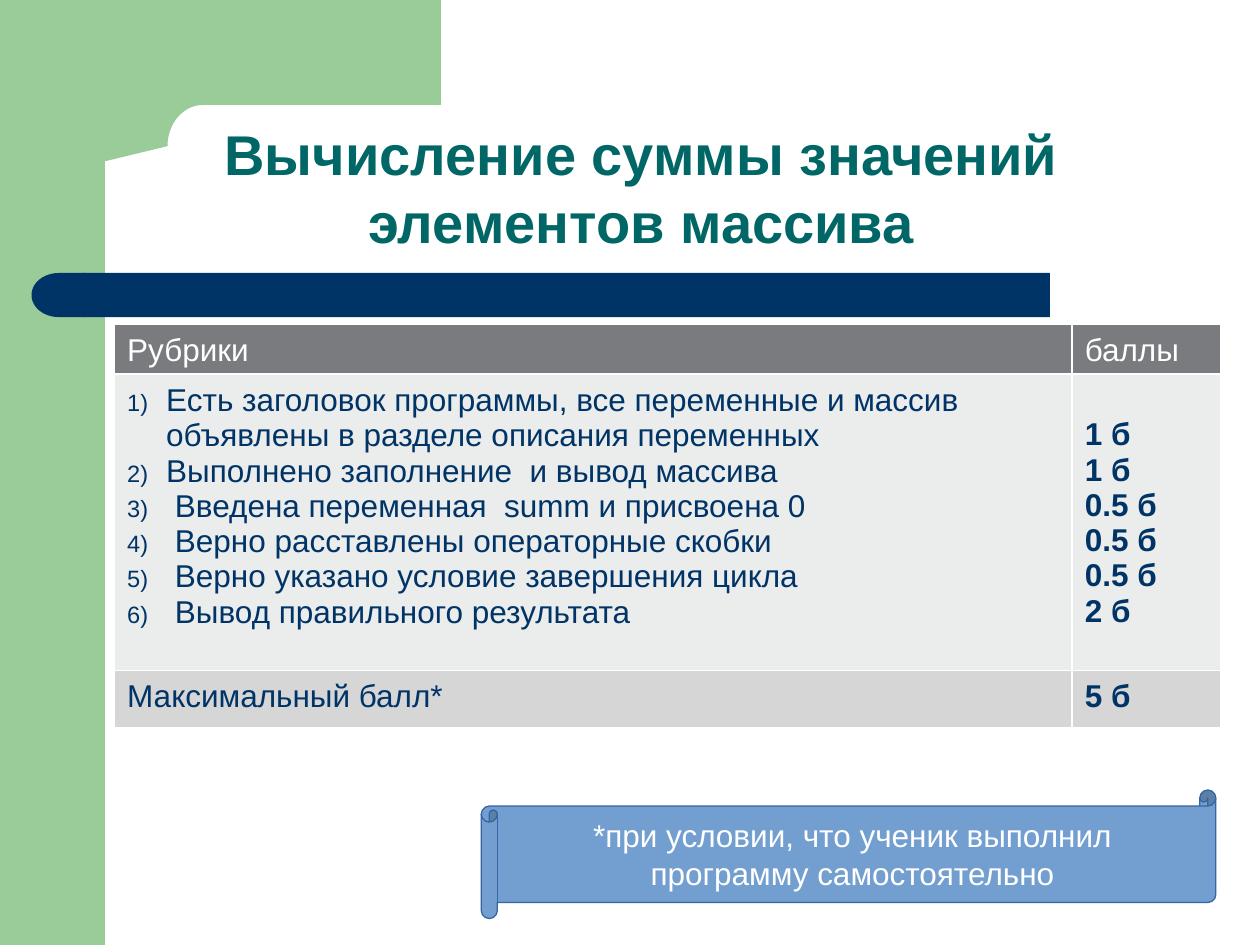
from dataclasses import dataclass
from math import cos, pi, sin

from lxml import etree
from pptx import Presentation
from pptx import util as u
from pptx.dml.color import RGBColor
from pptx.enum import shapes, text
from pptx.oxml.ns import qn

COLS, ROWS = 120, 90  # the slide's grid: twelve units to the inch
FONT = "Arial"
GREEN, NAVY, TEAL, WHITE = "99CC99", "003366", "006666", "FFFFFF"
KIND = shapes.MSO_SHAPE


@dataclass
class Box:
    x: float
    y: float
    w: float
    h: float


@dataclass
class Row:
    high: float
    left: list[str]
    right: list[str]
    fill: str
    ink: str
    bold: bool = True
    top: float = 0.84  # top inset of the right cell
    list: bool = False


TABLE = Box(10.92, 30.84, 105.36, 38.52)
WIDTHS = (91.2, 14.16)
GRID = [
    Row(4.8, ["Рубрики"], ["баллы"], "797B7E", WHITE, bold=False),
    Row(28.2, [
        "Есть заголовок программы, все переменные и массив "
        "объявлены в разделе описания переменных",
        "Выполнено заполнение  и вывод массива",
        " Введена переменная  summ и присвоена 0",
        " Верно расставлены операторные скобки",
        " Верно указано условие завершения цикла",
        " Вывод правильного результата",
    ], ["1 б", "1 б", "0.5 б", "0.5 б", "0.5 б", "2 б"],
        "EBECEC", NAVY, top=4.1, list=True),
    Row(5.52, ["Максимальный балл*"], ["5 б"], "D6D6D7", NAVY),
]


def unit(n: float) -> int:
    return u.Inches(n / 12)


def place(box: Box) -> list[int]:
    return [unit(n) for n in (box.x, box.y, box.w, box.h)]


def color(fmt, hex: str) -> None:
    """Set a solid fill on a fill format, or the colour of a font."""
    if hasattr(fmt, "solid"):
        fmt.solid()
        fmt.fore_color.rgb = RGBColor.from_string(hex)
    else:
        fmt.color.rgb = RGBColor.from_string(hex)


def style(para, size: int, ink: str, bold: bool = False) -> None:
    for run in para.runs:
        run.font.name, run.font.size, run.font.bold = FONT, u.Pt(size), bold
        color(run.font, ink)


def paint(shape, fill: str) -> None:
    shape.shadow.inherit = False
    color(shape.fill, fill)
    shape.line.fill.background()


def draw(slide, kind, box: Box, fill: str):
    shape = slide.shapes.add_shape(kind, *place(box))
    paint(shape, fill)
    return shape


def corner(slide) -> None:
    """Green block with a rounded inner corner."""
    mid, rad, steps = (19.32, 13.92), (3.36, 3.92), 16
    turn = [pi / 2 * i / steps for i in range(steps + 1)]
    arc = [(mid[0] - rad[0] * sin(a), mid[1] - rad[1] * cos(a)) for a in turn]
    pts = [(42, 0), (42, 10), *arc, (10, 15.36), (6, 15.36), (6, 0)]
    pts = [(unit(x), unit(y)) for x, y in pts]
    form = slide.shapes.build_freeform(*pts[0])
    form.add_line_segments(pts[1:], close=True)
    paint(form.convert_to_shape(), GREEN)


def number(para) -> None:
    prop = para._p.get_or_add_pPr()
    prop.set("marL", str(unit(3.72)))
    prop.set("indent", str(unit(-3.72)))
    tint = etree.SubElement(prop, qn("a:buClr"))
    etree.SubElement(tint, qn("a:srgbClr"), val=NAVY)
    etree.SubElement(prop, qn("a:buSzPct"), val="75000")
    etree.SubElement(prop, qn("a:buFont"), typeface=FONT)
    etree.SubElement(prop, qn("a:buAutoNum"), type="arabicParenR")


def border(cell) -> None:
    prop = cell._tc.get_or_add_tcPr()
    for i, side in enumerate(("lnL", "lnR", "lnT", "lnB")):
        line = etree.Element(qn(f"a:{side}"), w=str(u.Pt(1)))
        fill = etree.SubElement(line, qn("a:solidFill"))
        etree.SubElement(fill, qn("a:srgbClr"), val=WHITE)
        prop.insert(i, line)


def write(cell, lines: list[str], row: Row, top: float, bold: bool,
          list: bool = False) -> None:
    color(cell.fill, row.fill)
    border(cell)
    cell.margin_left = cell.margin_right = unit(1.2)
    cell.margin_top, cell.margin_bottom = unit(top), unit(0.6)
    cell.text_frame.text = "\n".join(lines)
    for para in cell.text_frame.paragraphs:
        if list:
            number(para)
        style(para, 18, row.ink, bold)


def rubric(slide) -> None:
    table = slide.shapes.add_table(len(GRID), 2, *place(TABLE)).table
    table.first_row = table.horz_banding = False
    for col, wide in zip(table.columns, WIDTHS):
        col.width = unit(wide)
    for i, row in enumerate(GRID):
        table.rows[i].height = unit(row.high)
        write(table.cell(i, 0), row.left, row, 0.84, False, row.list)
        write(table.cell(i, 1), row.right, row, row.top, row.bold)


def label(shape, words: str, size: int, ink: str, bold: bool = False) -> None:
    frame = shape.text_frame
    frame.text = words
    frame.word_wrap = True
    frame.auto_size = text.MSO_AUTO_SIZE.NONE
    frame.vertical_anchor = text.MSO_ANCHOR.MIDDLE
    para = frame.paragraphs[0]
    para.alignment = text.PP_ALIGN.CENTER
    style(para, size, ink, bold)


def main() -> None:
    deck = Presentation()
    deck.slide_width, deck.slide_height = unit(COLS), unit(ROWS)
    slide = deck.slides.add_slide(deck.slide_layouts[5])

    # Green frame and navy bar
    draw(slide, KIND.RECTANGLE, Box(0, 0, 10, ROWS), GREEN)
    corner(slide)
    draw(slide, KIND.RECTANGLE, Box(8, 26, 92, 4.2), NAVY)
    cap = draw(slide, KIND.FLOWCHART_DELAY, Box(3, 26, 5.16, 4.2), NAVY)
    cap.rotation = 180

    # Title
    title = slide.shapes.title
    title.left, title.top, title.width, title.height = place(
        Box(11.76, 12.84, 98.64, 9.96))
    label(title, "Вычисление суммы значений элементов массива",
          32, TEAL, bold=True)

    # Scoring table
    rubric(slide)

    # Footnote scroll
    note = draw(slide, KIND.HORIZONTAL_SCROLL,
                Box(45.84, 75.24, 69.96, 12.24), "729FCF")
    color(note.line.fill, "3465A4")
    note.line.width = u.Pt(0.75)
    label(note, "*при условии, что ученик выполнил программу самостоятельно",
          18, WHITE)

    deck.save("out.pptx")


if __name__ == "__main__":
    main()
